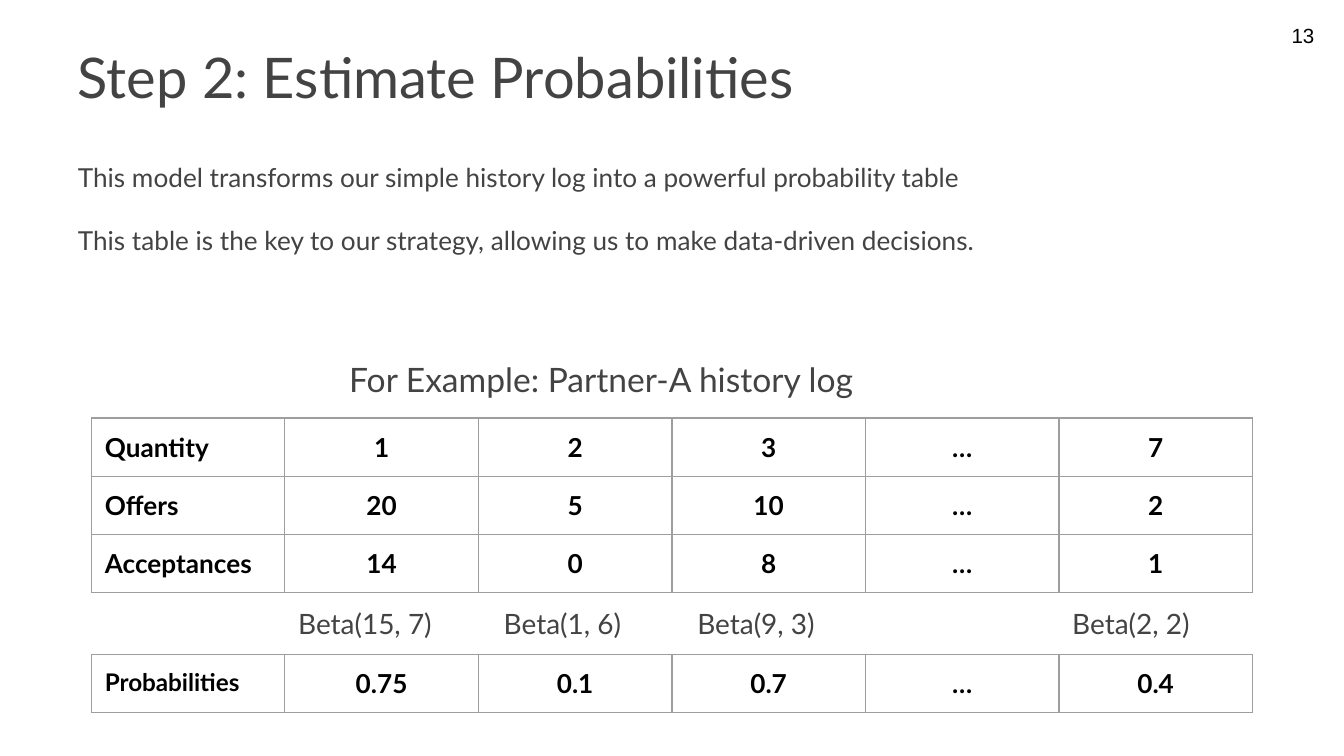
from lxml.etree import SubElement
from pptx import Presentation
from pptx.dml.color import RGBColor
from pptx.enum.text import MSO_ANCHOR as Anchor, PP_ALIGN as Align
from pptx.oxml.ns import qn
from pptx.util import Inches, Pt

GREY = RGBColor(0x43, 0x43, 0x43)
BLACK = RGBColor(0, 0, 0)
BORDER = RGBColor(0x9E, 0x9E, 0x9E)

# Grid shared by both tables and the Beta labels, in inches
LEFT, COLUMN, ROW = 0.68, 1.44, 0.42
COLUMNS = 6

HISTORY = [
    ["Quantity", "1", "2", "3", "…", "7"],
    ["Offers", "20", "5", "10", "…", "2"],
    ["Acceptances", "14", "0", "8", "…", "1"],
]
PROBABILITIES = [["Probabilities", "0.75", "0.1", "0.7", "…", "0.4"]]
# Column, label, offset from the column's left edge
BETAS = [
    (1, "Beta(15, 7)", 0),
    (2, "Beta(1, 6)", 0.09),
    (3, "Beta(9, 3)", 0.09),
    (5, "Beta(2, 2)", 0),
]


def style(paragraph, size, color=GREY, font="Lato", bold=False, align=Align.LEFT):
    paragraph.alignment = align
    paragraph.font.size = Pt(size)
    paragraph.font.name = font
    paragraph.font.bold = bold
    paragraph.font.color.rgb = color


def add_text(slide, box, lines, size, inset=(0.1, 0.1), anchor=Anchor.TOP,
             gap=0, **look):
    frame = slide.shapes.add_textbox(*map(Inches, box)).text_frame
    frame.word_wrap = True
    frame.vertical_anchor = anchor
    frame.margin_left = frame.margin_right = Inches(inset[0])
    frame.margin_top = frame.margin_bottom = Inches(inset[1])
    for i, line in enumerate(lines):
        paragraph = frame.add_paragraph() if i else frame.paragraphs[0]
        paragraph.text = line
        style(paragraph, size, **look)
        if i:
            paragraph.space_before = Pt(gap)


def add_borders(cell):
    properties = cell._tc.get_or_add_tcPr()
    for side in ("lnL", "lnR", "lnT", "lnB"):
        line = SubElement(properties, qn(f"a:{side}"), w=str(Pt(0.75)))
        fill = SubElement(line, qn("a:solidFill"))
        SubElement(fill, qn("a:srgbClr"), val=str(BORDER))


def add_grid(slide, left, top, rows, heading_size=14):
    table = slide.shapes.add_table(
        len(rows), COLUMNS, Inches(left), Inches(top),
        Inches(COLUMN * COLUMNS), Inches(ROW * len(rows))).table
    table.first_row = table.horz_banding = False
    for r, values in enumerate(rows):
        for c, value in enumerate(values):
            cell = table.cell(r, c)
            cell.margin_left = cell.margin_right = Inches(0.1)
            cell.margin_top = cell.margin_bottom = Inches(0.1)
            add_borders(cell)
            cell.fill.background()
            cell.text = value
            style(cell.text_frame.paragraphs[0], 14 if c else heading_size,
                  BLACK, bold=True, align=Align.CENTER if c else Align.LEFT)


def add_header(slide, left, top, width):
    inset = (0.07, 0.04)
    add_text(slide, (left, top, width, 0.83), ["Step 2: Estimate Probabilities"],
             30, inset, Anchor.MIDDLE)
    add_text(slide, (left, top + 1.01, width, 1.22), [
        "This model transforms our simple history log into a powerful probability table",
        "This table is the key to our strategy, allowing us to make data-driven decisions.",
    ], 14, inset, gap=17)
    # Page number
    add_text(slide, (left + 7.01, top - 0.02, 2.33, 0.39), ["13"], 11, inset,
             color=BLACK, font="Arial", align=Align.RIGHT)


def add_example(slide, left, top):
    # Probabilities below, history log above, Beta labels between them
    add_grid(slide, left, top + 2.3, PROBABILITIES, heading_size=13)
    for column, label, offset in BETAS:
        add_text(slide, (left + column * COLUMN + offset, top + 1.84, COLUMN, 0.46),
                 [label], 15)
    add_text(slide, (left + 1.82, top, 5.01, 0.5),
             ["For Example: Partner-A history log"], 18)
    add_grid(slide, left, top + 0.54, HISTORY)


def main():
    deck = Presentation()
    # Widescreen, 16:9
    deck.slide_width = Inches(10)
    deck.slide_height = deck.slide_width * 9 // 16
    slide = deck.slides.add_slide(deck.slide_layouts[6])
    add_header(slide, 0.51, 0.15, 9)
    add_example(slide, LEFT, 2.57)
    deck.save("out.pptx")


if __name__ == "__main__":
    main()
